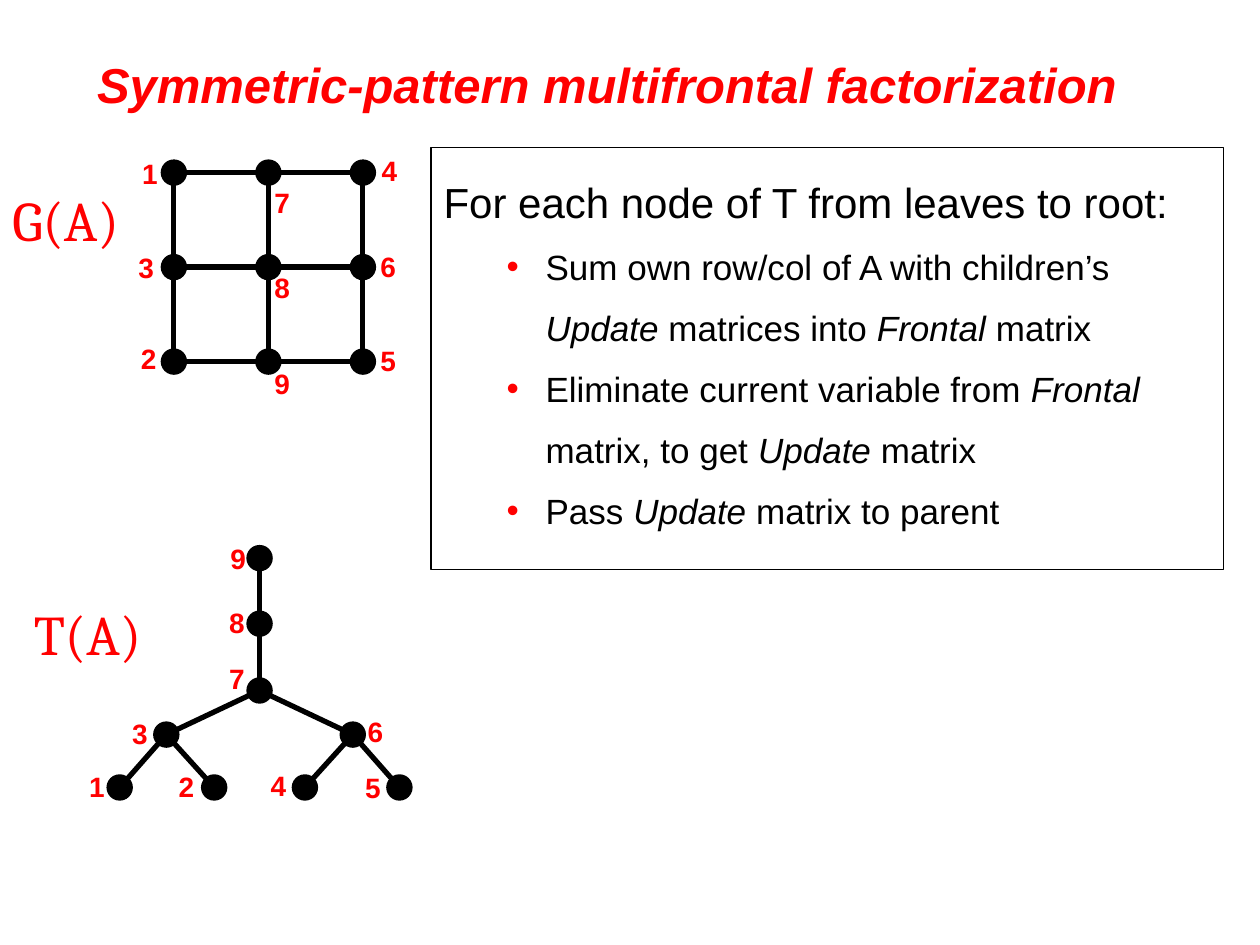
"""Build the slide on symmetric-pattern multifrontal factorization."""
import pptx
import pptx.util
import pptx.dml.color
import pptx.enum.shapes
import pptx.enum.text
import pptx.oxml
from pptx.oxml.ns import qn

Inches, Pt = pptx.util.Inches, pptx.util.Pt
RED = pptx.dml.color.RGBColor(0xFF, 0x00, 0x00)
BLACK = pptx.dml.color.RGBColor(0x00, 0x00, 0x00)
NS = 'xmlns:a="http://schemas.openxmlformats.org/drawingml/2006/main"'

TITLE = "Symmetric-pattern multifrontal factorization"
LEAD = "For each node of T from leaves to root:"
STEPS = [
    [("Sum own row/col of A with children’s ", False), ("Update", True),
     (" matrices into ", False), ("Frontal ", True), ("matrix", False)],
    [("Eliminate current variable from ", False), ("Frontal", True),
     (" matrix, to get ", False), ("Update", True), (" matrix", False)],
    [("Pass ", False), ("Update", True), (" matrix to parent", False)],
]

GRID_ROWS = [(1, 7, 4), (3, 8, 6), (2, 9, 5)]
GRID_LEFT, GRID_TOP, GRID_STEP = 1.38, 1.37, 0.75
GRAPH = {
    "name": ("G(A)", (0, 1.42, 1.25, 0.63)),
    "nodes": {n: (GRID_LEFT + GRID_STEP * col, GRID_TOP + GRID_STEP * row)
              for row, line in enumerate(GRID_ROWS) for col, n in enumerate(line)},
    "edges": [(line[0], line[-1])
              for line in GRID_ROWS + list(zip(*GRID_ROWS))],
    "labels": {1: (1.03, 1.19), 2: (1.02, 2.66), 3: (1, 1.94),
               4: (2.93, 1.17), 5: (2.92, 2.68), 6: (2.92, 1.93),
               7: (2.08, 1.42), 8: (2.08, 2.1), 9: (2.08, 2.86)},
}
TREE = {
    "name": ("T(A)", (0.17, 4.71, 1.2, 0.63)),
    "nodes": {9: (2.06, 4.43), 8: (2.06, 4.95), 7: (2.06, 5.48),
              3: (1.32, 5.83), 6: (2.8, 5.83),
              1: (0.95, 6.25), 2: (1.7, 6.25), 4: (2.42, 6.25), 5: (3.17, 6.25)},
    "edges": [(9, 7), (7, 3), (7, 6), (3, 1), (3, 2), (6, 4), (6, 5)],
    "labels": {1: (0.61, 6.06), 2: (1.32, 6.06), 3: (0.95, 5.64),
               4: (2.05, 6.05), 5: (2.8, 6.07), 6: (2.82, 5.62),
               7: (1.72, 5.2), 8: (1.72, 4.76), 9: (1.73, 4.25)},
}
DOT = 0.21
LABEL_SIZE = (0.32, 0.37)

TITLE_FONT = {"name": "Arial", "size": Pt(28), "bold": True, "italic": True}
LEAD_FONT = {"name": "Arial", "size": Pt(24)}
STEP_FONT = {"name": "Arial", "size": Pt(20)}
LABEL_FONT = {"name": "Arial", "size": Pt(16), "bold": True}
NAME_FONT = {"name": "Cambria", "size": Pt(32)}


def set_all(obj, values):
    for key, value in values.items():
        setattr(obj, key, value)


def add_run(p, text, font, color):
    r = p.add_run()
    r.text = text
    set_all(r.font, font)
    r.font.color.rgb = color


def place(sp, left, top, width, height):
    set_all(sp, {"left": Inches(left), "top": Inches(top),
                 "width": Inches(width), "height": Inches(height)})


def format_paragraph(p, margin, indent, *bullet):
    set_all(p, {"line_spacing": 1.45, "space_before": Pt(0)})
    pPr = p._p.get_or_add_pPr()
    pPr.set("marL", str(Inches(margin)))
    pPr.set("indent", str(Inches(indent)))
    for xml in bullet:
        pPr.append(pptx.oxml.parse_xml(xml))


def add_text(s, text, box, font):
    sp = s.shapes.add_textbox(*map(Inches, box))
    tf = sp.text_frame
    set_all(tf, {"word_wrap": False,
                 "auto_size": pptx.enum.text.MSO_AUTO_SIZE.SHAPE_TO_FIT_TEXT})
    add_run(tf.paragraphs[0], text, font, RED)


def add_network(s, net):
    nodes = net["nodes"]
    for a, b in net["edges"]:
        line = s.shapes.add_connector(pptx.enum.shapes.MSO_CONNECTOR.STRAIGHT,
                                      *map(Inches, nodes[a] + nodes[b]))
        line.line.color.rgb = BLACK
        line.line.width = Pt(3)
        line._element.spPr.append(pptx.oxml.parse_xml(f"<a:effectLst {NS}/>"))
    for x, y in nodes.values():
        dot = s.shapes.add_shape(pptx.enum.shapes.MSO_SHAPE.OVAL,
                                 *map(Inches, (x - DOT / 2, y - DOT / 2, DOT, DOT)))
        dot.shadow.inherit = False
        dot.fill.solid()
        dot.fill.fore_color.rgb = BLACK
        dot.line.fill.background()
    for n, corner in net["labels"].items():
        add_text(s, str(n), corner + LABEL_SIZE, LABEL_FONT)
    add_text(s, *net["name"], NAME_FONT)


def add_title(s):
    sp = s.shapes.title
    place(sp, 0.67, 0.33, 8.75, 0.67)
    tf = sp.text_frame
    set_all(tf, {"vertical_anchor": pptx.enum.text.MSO_ANCHOR.MIDDLE,
                 "auto_size": pptx.enum.text.MSO_AUTO_SIZE.NONE})
    p = tf.paragraphs[0]
    p.alignment = pptx.enum.text.PP_ALIGN.LEFT
    add_run(p, TITLE, TITLE_FONT, RED)


def add_body(s):
    sp = s.placeholders[1]
    place(sp, 3.42, 1.17, 6.29, 3.35)
    sp.line.color.rgb = BLACK
    sp.line.width = Pt(1)
    tf = sp.text_frame
    tf.auto_size = pptx.enum.text.MSO_AUTO_SIZE.NONE
    p = tf.paragraphs[0]
    format_paragraph(p, 0.38, -0.38, f"<a:buNone {NS}/>")
    add_run(p, LEAD, LEAD_FONT, BLACK)
    for step in STEPS:
        p = tf.add_paragraph()
        p.level = 1
        format_paragraph(
            p, 0.81, -0.31,
            f'<a:buClr {NS}><a:srgbClr val="{RED}"/></a:buClr>',
            f'<a:buFont {NS} typeface="Arial"/>',
            f'<a:buChar {NS} char="•"/>')
        for text, italic in step:
            add_run(p, text, {**STEP_FONT, "italic": italic}, BLACK)


def main():
    prs = pptx.Presentation()
    set_all(prs, {"slide_width": Inches(10), "slide_height": Inches(7.5)})
    s = prs.slides.add_slide(prs.slide_layouts[1])
    add_title(s)
    add_body(s)
    for net in (TREE, GRAPH):
        add_network(s, net)
    prs.save("out.pptx")


if __name__ == "__main__":
    main()
